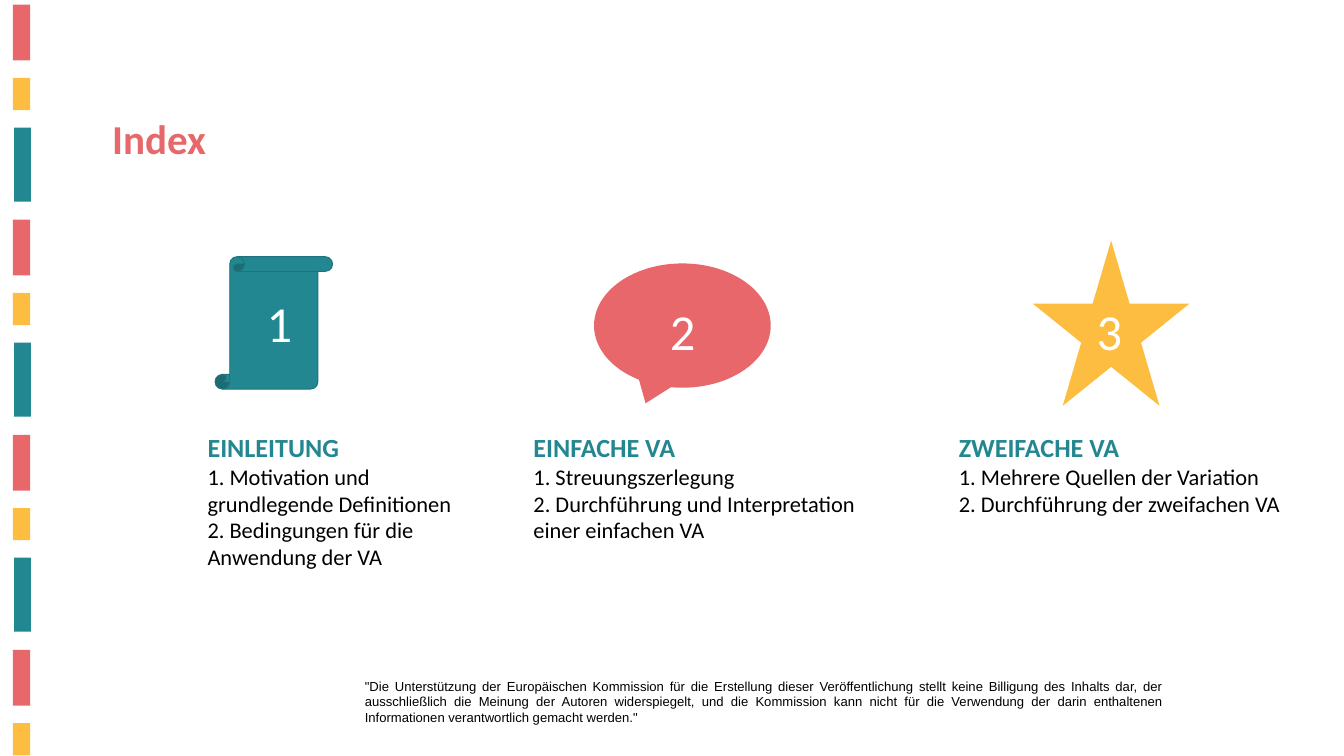
"""Build the index slide of a course on the analysis of variance."""
import pptx
import pptx.dml.color
import pptx.enum.shapes
import pptx.enum.text
import pptx.util

SHAPE = pptx.enum.shapes.MSO_SHAPE
ALIGN = pptx.enum.text.PP_ALIGN
SCALE = 9144
SIZE = (2000, 1125)


class Theme:
    red, yellow, teal = "E8676A", "FDBD40", "238791"
    title_red, edge = "E7686A", "1E737C"
    black, white = "000000", "FFFFFF"
    font, note_font = "Calibri", "Arial"
    title, number, heading, body, note = 44, 54, 28, 24, 14


TITLE = ("Index", (157, 164, 677, 158))
NOTE = (
    "\"Die Unterstützung der Europäischen Kommission für die Erstellung dieser "
    "Veröffentlichung stellt keine Billigung des Inhalts dar, der ausschließlich die "
    "Meinung der Autoren widerspiegelt, und die Kommission kann nicht für die Verwendung "
    "der darin enthaltenen Informationen verantwortlich gemacht werden.\"",
    (533, 1004, 1208, 81),
)
CHAPTERS = [
    {
        "heading": "EINLEITUNG",
        "items": ["1. Motivation und grundlegende Definitionen",
                  "2. Bedingungen für die Anwendung der VA"],
        "text_at": (299, 637, 440, 289),
        "icon": SHAPE.VERTICAL_SCROLL, "icon_at": (320, 382, 175, 197),
        "fill": Theme.teal, "edge": Theme.edge,
        "number_at": (387, 430, 158, 101),
    },
    {
        "heading": "EINFACHE VA",
        "items": ["1. Streuungszerlegung",
                  "2. Durchführung und Interpretation einer einfachen VA"],
        "text_at": (784, 637, 517, 249),
        "icon": SHAPE.OVAL_CALLOUT, "icon_at": (884, 392, 263, 185),
        "fill": Theme.red, "edge": None,
        "number_at": (987, 441, 108, 101),
    },
    {
        "heading": "ZWEIFACHE VA",
        "items": ["1. Mehrere Quellen der Variation",
                  "2. Durchführung der zweifachen VA"],
        "text_at": (1417, 637, 540, 162),
        "icon": SHAPE.STAR_5_POINT, "icon_at": (1537, 358, 233, 246),
        "fill": Theme.yellow, "edge": None,
        "number_at": (1622, 441, 150, 101),
    },
]
STRIPES = [
    (Theme.red, (19, 7, 26, 83)),
    (Theme.yellow, (19, 116, 26, 48)),
    (Theme.teal, (21, 190, 25, 110)),
]
STRIPE_COUNT, STRIPE_PITCH = 11, 320


def px(*lengths):
    return [pptx.util.Emu(length * SCALE) for length in lengths]


def rgb(colour):
    return pptx.dml.color.RGBColor.from_string(colour)


def add_shape(page, kind, at, fill, edge=None):
    shape = page.shapes.add_shape(kind, *px(*at))
    shape.shadow.inherit = False
    shape.fill.solid()
    shape.fill.fore_color.rgb = rgb(fill)
    if edge:
        shape.line.color.rgb = rgb(edge)
        shape.line.width = pptx.util.Pt(1)
    else:
        shape.line.fill.background()


def add_box(page, at):
    frame = page.shapes.add_textbox(*px(*at)).text_frame
    frame.word_wrap = True
    return frame


def write(frame, text, *, size, colour, bold=False, font=Theme.font, align=ALIGN.LEFT):
    para = frame.paragraphs[0] if not frame.text else frame.add_paragraph()
    para.alignment = align
    span = para.add_run()
    span.text = text
    span.font.name = font
    span.font.size = pptx.util.Pt(size)
    span.font.bold = bold
    span.font.color.rgb = rgb(colour)


def add_title(page):
    text, at = TITLE
    title = page.shapes.title
    title.left, title.top, title.width, title.height = px(*at)
    frame = title.text_frame
    frame.vertical_anchor = pptx.enum.text.MSO_ANCHOR.TOP
    frame.auto_size = pptx.enum.text.MSO_AUTO_SIZE.NONE
    write(frame, text, size=Theme.title, colour=Theme.title_red, bold=True)


def add_stripes(page):
    for index in range(STRIPE_COUNT):
        cycle, position = divmod(index, len(STRIPES))
        colour, (left, top, width, height) = STRIPES[position]
        at = (left, top + cycle * STRIPE_PITCH, width, height)
        add_shape(page, SHAPE.RECTANGLE, at, colour)


def add_chapter(page, number, chapter):
    add_shape(page, chapter["icon"], chapter["icon_at"], chapter["fill"], chapter["edge"])
    write(add_box(page, chapter["number_at"]), str(number),
          size=Theme.number, colour=Theme.white)
    frame = add_box(page, chapter["text_at"])
    write(frame, chapter["heading"], size=Theme.heading, colour=Theme.teal, bold=True)
    for item in chapter["items"]:
        write(frame, item, size=Theme.body, colour=Theme.black)


def main():
    deck = pptx.Presentation()
    deck.slide_width, deck.slide_height = px(*SIZE)
    page = deck.slides.add_slide(deck.slide_layouts.get_by_name("Title Only"))
    add_stripes(page)
    add_title(page)
    for number, chapter in enumerate(CHAPTERS, 1):
        add_chapter(page, number, chapter)
    text, at = NOTE
    write(add_box(page, at), text, size=Theme.note, colour=Theme.black,
          font=Theme.note_font, align=ALIGN.JUSTIFY)
    deck.save("out.pptx")


if __name__ == "__main__":
    main()
